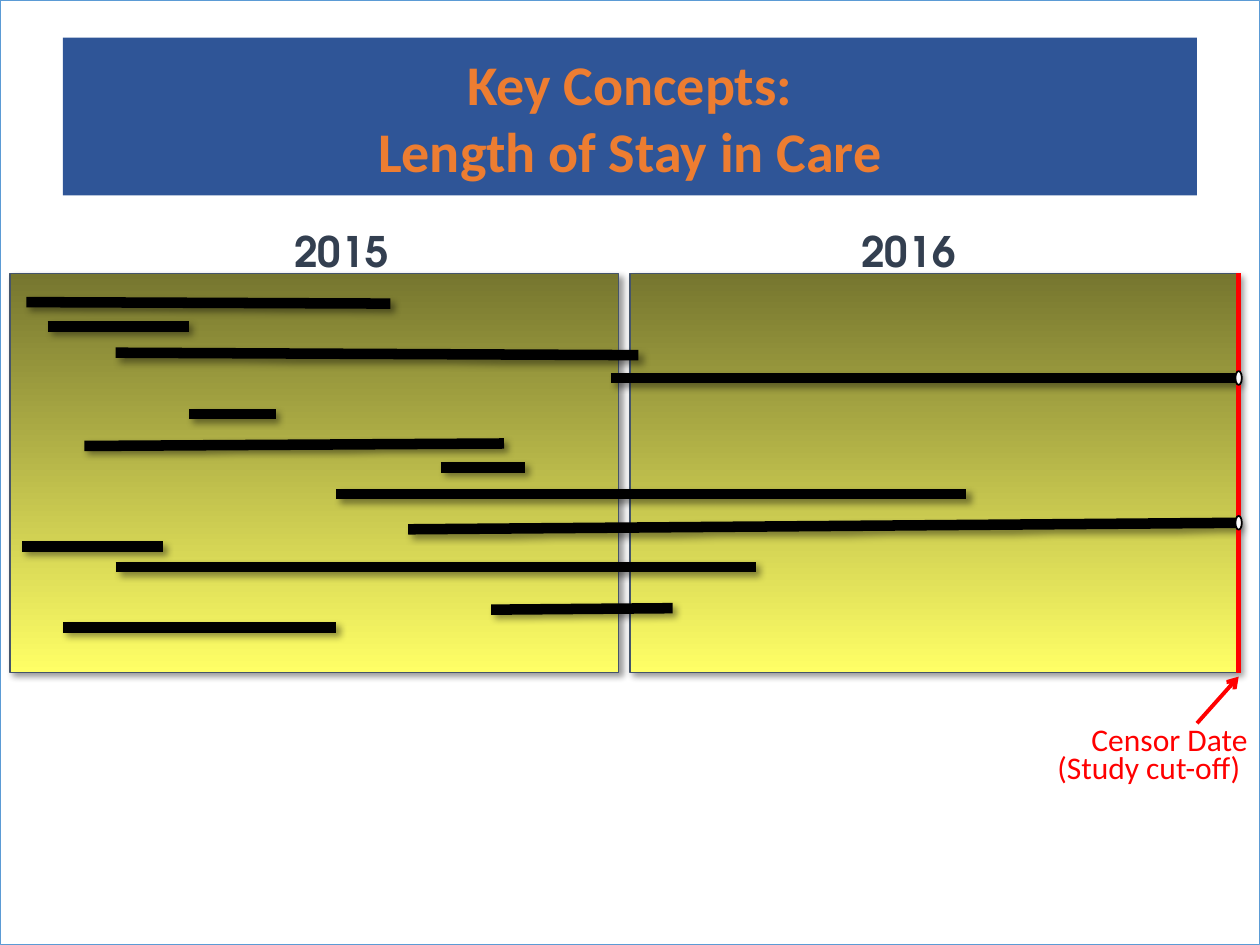
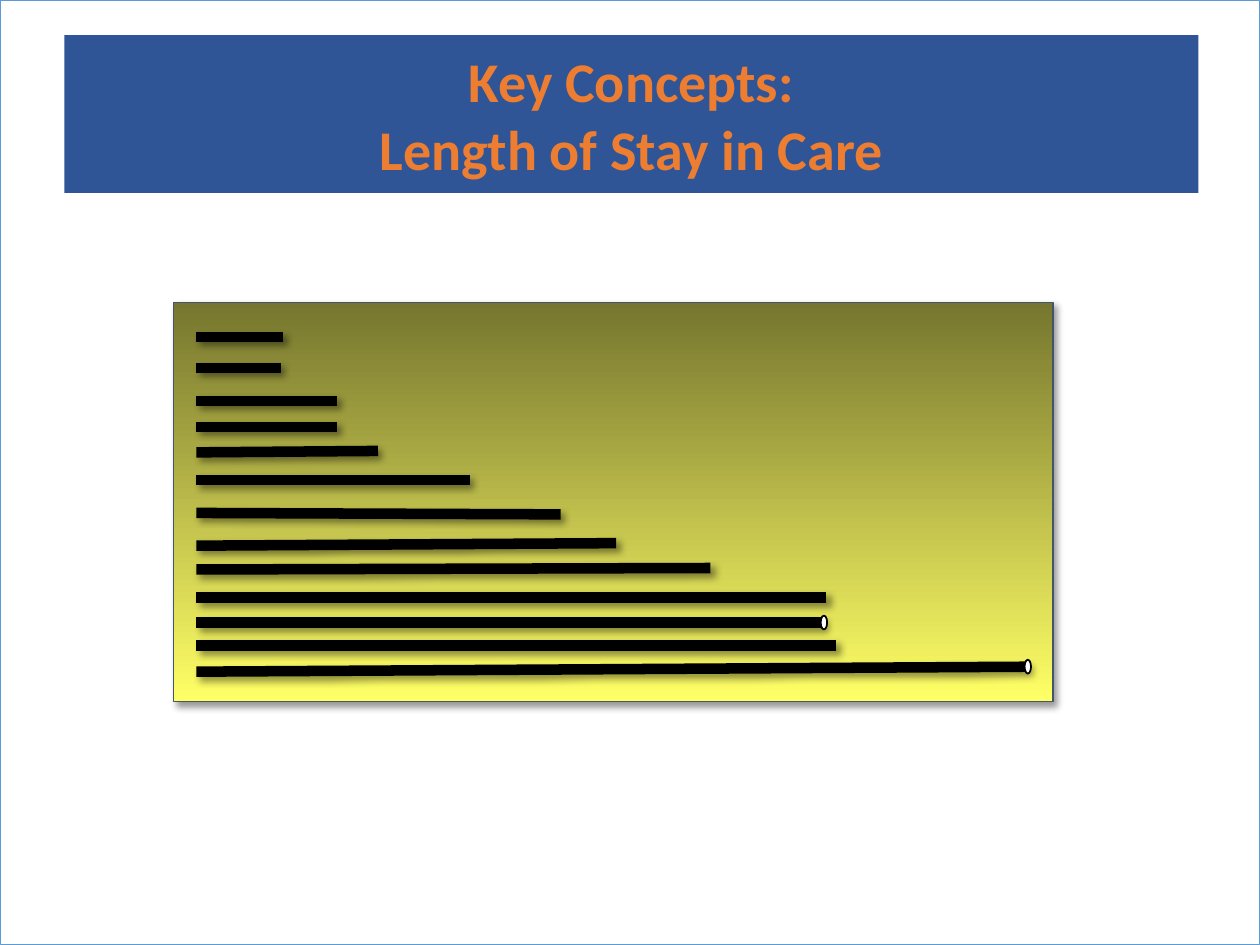
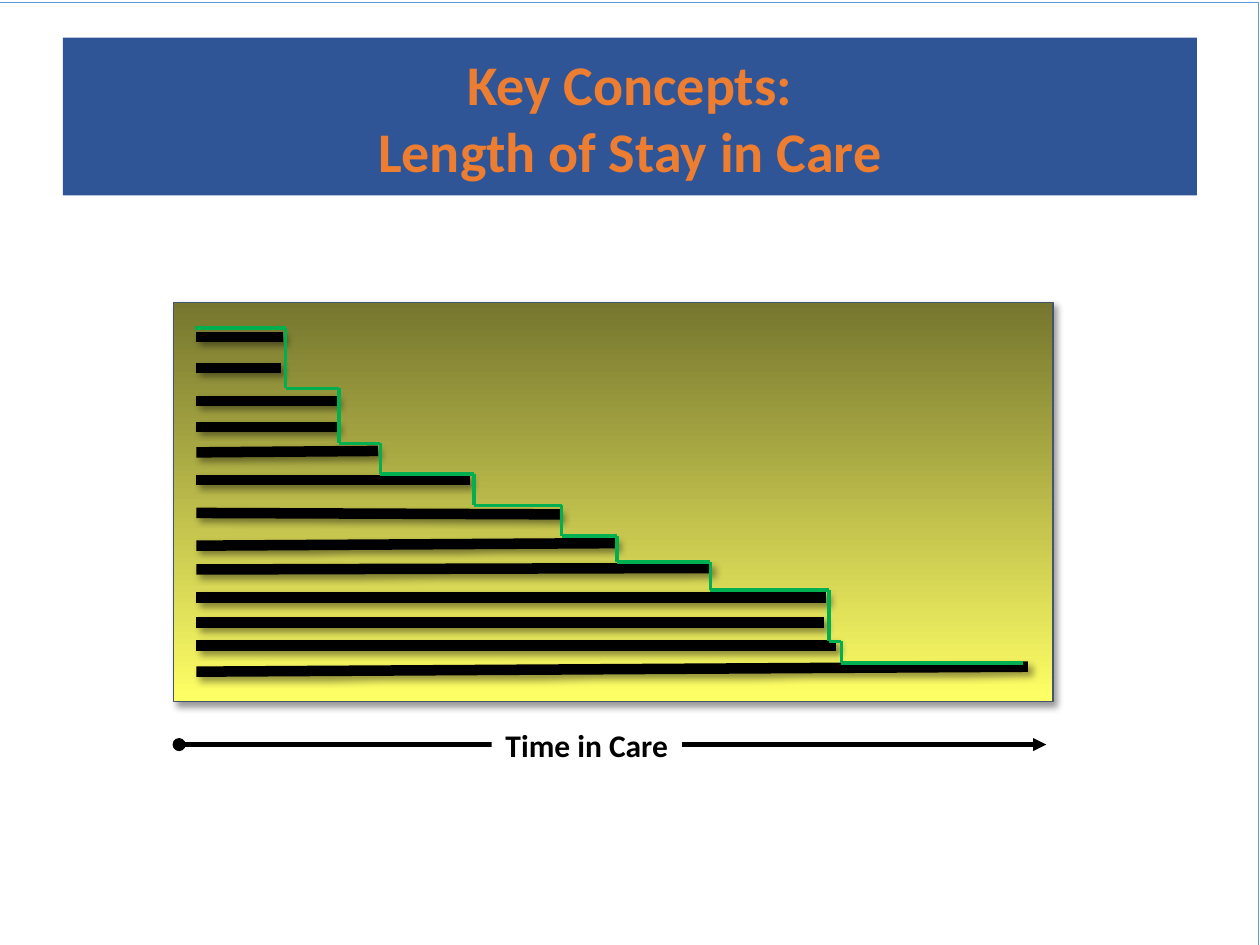
from collections import namedtuple

from lxml import etree
from pptx import Presentation
from pptx import util as u
from pptx.dml.color import RGBColor
from pptx.enum import shapes, text
from pptx.oxml import ns

WHITE, BLACK, RED, GREEN = "FFFFFF", "000000", "FF0000", "00B050"
FRAME_BLUE, TITLE_BLUE, TITLE_ORANGE = "5B9BD5", "2F5597", "ED7D31"
PANEL_TOP, PANEL_BOTTOM, PANEL_EDGE = "76762F", "FFFF66", "44546A"
YEAR_COLOR = "333F50"
BODY_FONT, YEAR_FONT = "Calibri", "TeX Gyre Adventor"
SLIDE_W, SLIDE_H = 25.4, 19.05
TITLE_BOX = (1.27, 0.76, 22.86, 3.18)
STAY_BOX = (3.5, 6.1, 17.73, 8.05)

# All measures are in cm from the corner of the enclosing box
Stay = namedtuple("Stay", "x y length drop censored", defaults=(0, False))

CALENDAR_STAYS = [
    Stay(2.13, 5.92, 12.9),
    Stay(6.58, 4.45, 12.7),
    Stay(12.12, 2.11, 12.65, 0, True),
    Stay(8.03, 5.16, 16.74, -0.13, True),
    Stay(0.33, 0.58, 7.34, 0.03),
    Stay(0.76, 1.07, 2.84),
    Stay(2.13, 1.6, 10.54, 0.05),
    Stay(3.61, 2.84, 1.75),
    Stay(1.5, 3.48, 8.46, -0.05),
    Stay(8.69, 3.91, 1.7),
    Stay(1.07, 7.14, 5.51),
    Stay(0.25, 5.51, 2.84),
    Stay(9.7, 6.78, 3.66, -0.03),
]
SORTED_STAYS = [Stay(0.46, *rest) for rest in (
    (0.69, 1.75), (1.32, 1.7), (1.98, 2.84), (2.51, 2.84),
    (3.02, 3.66, -0.03), (3.58, 5.51), (4.24, 7.34, 0.03),
    (4.9, 8.46, -0.05), (5.38, 10.36, -0.03), (5.94, 12.7),
    (6.45, 12.65, 0, True), (6.91, 12.9), (7.44, 16.76, -0.1, True))]

# Right end and height of each tread of the survival curve
TREADS = [(2.26, 0.51), (3.33, 1.73), (4.17, 2.84), (6.05, 3.45),
          (7.82, 4.09), (8.94, 4.7), (10.82, 5.23), (13.21, 5.79),
          (13.46, 6.83), (17.12, 7.26)]


def rgb(color):
    return RGBColor.from_string(color)


def set_effects(sp, shadow):
    """Give a shape the common soft shadow, or none at all."""
    effects = etree.SubElement(sp._element.spPr, ns.qn("a:effectLst"))
    if shadow:
        outer = etree.SubElement(effects, ns.qn("a:outerShdw"), blurRad="50800",
                                 dist="38100", dir="2700000", algn="tl", rotWithShape="0")
        black = etree.SubElement(outer, ns.qn("a:srgbClr"), val=BLACK)
        etree.SubElement(black, ns.qn("a:alpha"), val="40000")


def add_box(s, box, fill=None, line=None, width=0, kind="RECTANGLE", shadow=False):
    sp = s.shapes.add_shape(shapes.MSO_SHAPE[kind], *map(u.Cm, box))
    if fill:
        sp.fill.solid()
        sp.fill.fore_color.rgb = rgb(fill)
    if line:
        sp.line.color.rgb = rgb(line)
        sp.line.width = u.Pt(width)
    else:
        sp.line.fill.background()
    set_effects(sp, shadow)
    return sp


def add_line(s, start, end, color, width, shadow=False, head=None, tail=None):
    line = s.shapes.add_connector(shapes.MSO_CONNECTOR.STRAIGHT,
                                  *map(u.Cm, (*start, *end)))
    line.line.color.rgb = rgb(color)
    line.line.width = u.Pt(width)
    for tag, kind in (("a:headEnd", head), ("a:tailEnd", tail)):
        if kind:
            etree.SubElement(line.line._ln, ns.qn(tag), type=kind)
    set_effects(line, shadow)


def write(sp, lines, size, color, font=BODY_FONT, bold=False, align="CENTER", spacing=None):
    tf = sp.text_frame
    tf.word_wrap = True
    for i, line in enumerate(lines):
        p = tf.add_paragraph() if i else tf.paragraphs[0]
        p.text = line
        p.alignment = text.PP_ALIGN[align]
        if spacing:
            p.line_spacing = u.Pt(spacing)
        p.font.name, p.font.size, p.font.bold = font, u.Pt(size), bold
        p.font.color.rgb = rgb(color)


def add_text(s, box, lines, *style, **options):
    write(s.shapes.add_textbox(*map(u.Cm, box)), lines, *style, **options)


def add_base(prs, frame_at=(0, 0), title_box=TITLE_BOX):
    """Blank slide with the thin frame and the title band."""
    s = prs.slides.add_slide(prs.slide_layouts[6])
    add_box(s, (*frame_at, SLIDE_W, SLIDE_H), WHITE, FRAME_BLUE, 0.5)
    band = add_box(s, title_box, TITLE_BLUE)
    band.text_frame.vertical_anchor = text.MSO_ANCHOR.MIDDLE
    write(band, ["Key Concepts:", "Length of Stay in Care"], 32, TITLE_ORANGE, bold=True)
    return s


def add_panel(s, box):
    sp = add_box(s, box, line=PANEL_EDGE, width=0.75, shadow=True)
    sp.fill.gradient()
    sp.fill.gradient_angle = 270
    for stop, color, position in zip(sp.fill.gradient_stops, (PANEL_TOP, PANEL_BOTTOM), (0, 1)):
        stop.color.rgb = rgb(color)
        stop.position = position


def add_stays(s, box, stays):
    left, top = box[:2]
    for stay in stays:
        x, y = left + stay.x, top + stay.y
        add_line(s, (x, y), (x + stay.length, y + stay.drop), BLACK, 6, shadow=True)


def add_censor_marks(s, box, stays):
    w, h = 0.13, 0.28
    for stay in stays:
        if stay.censored:
            x = box[0] + stay.x + stay.length
            y = box[1] + stay.y + stay.drop
            add_box(s, (x - w / 2, y - h / 2, w, h), WHITE, BLACK, 1, kind="OVAL")


def add_calendar(s, box):
    """Two year panels with stays and the censor date on the right edge."""
    left, top, width, height = box
    gap = 0.23
    panel_w = (width - gap) / 2
    for i, (year, label_x) in enumerate((("2015", 3.61), ("2016", 15.04))):
        add_panel(s, (left + i * (panel_w + gap), top, panel_w, height))
        add_text(s, (left + label_x, top - 1.09, 6.15, 1.27), [year], 24, YEAR_COLOR,
                 font=YEAR_FONT, bold=True)
    add_stays(s, box, CALENDAR_STAYS)

    # Censor date
    right, bottom = left + width, top + height
    add_line(s, (right, top), (right, bottom), RED, 3)
    add_text(s, (right - 4.02, bottom + 1.02, 4.45, 2.16),
             ["Censor Date", "(Study cut-off) "], 18, RED, align="RIGHT", spacing=16)
    add_line(s, (right - 0.84, bottom + 1.02), (right, bottom + 0.08), RED, 2.25, tail="arrow")
    add_censor_marks(s, box, CALENDAR_STAYS)


def add_sorted_stays(s, box):
    add_panel(s, box)
    add_stays(s, box, SORTED_STAYS)


def add_survival_curve(s, box):
    left, top = box[:2]
    corner = (left + 0.43, top + TREADS[0][1])
    for x, y in TREADS:
        for point in ((corner[0], top + y), (left + x, top + y)):
            if point != corner:
                add_line(s, corner, point, GREEN, 2)
            corner = point


def add_time_axis(s, box):
    left, top, width, height = box
    middle = top + height / 2
    add_line(s, (left, middle), (left + width, middle), BLACK, 2.5, head="oval", tail="triangle")
    label = add_box(s, (left + 6.3, top, 3.84, height), WHITE)
    write(label, ["Time in Care"], 18, BLACK, bold=True)


def main():
    prs = Presentation()
    prs.slide_width, prs.slide_height = u.Cm(SLIDE_W), u.Cm(SLIDE_H)

    # Stays on the calendar
    s = add_base(prs)
    add_calendar(s, (0.2, 5.51, 24.77, 8.05))

    # Stays sorted by length
    s = add_base(prs, title_box=(1.3, 0.71, 22.86, 3.18))
    add_sorted_stays(s, STAY_BOX)
    add_censor_marks(s, STAY_BOX, SORTED_STAYS)

    # Survival curve over the sorted stays
    s = add_base(prs, frame_at=(-0.03, 0.05))
    add_time_axis(s, (3.61, 14.5, 17.48, 1.02))
    add_sorted_stays(s, STAY_BOX)
    add_survival_curve(s, STAY_BOX)

    prs.save("out.pptx")


if __name__ == "__main__":
    main()
